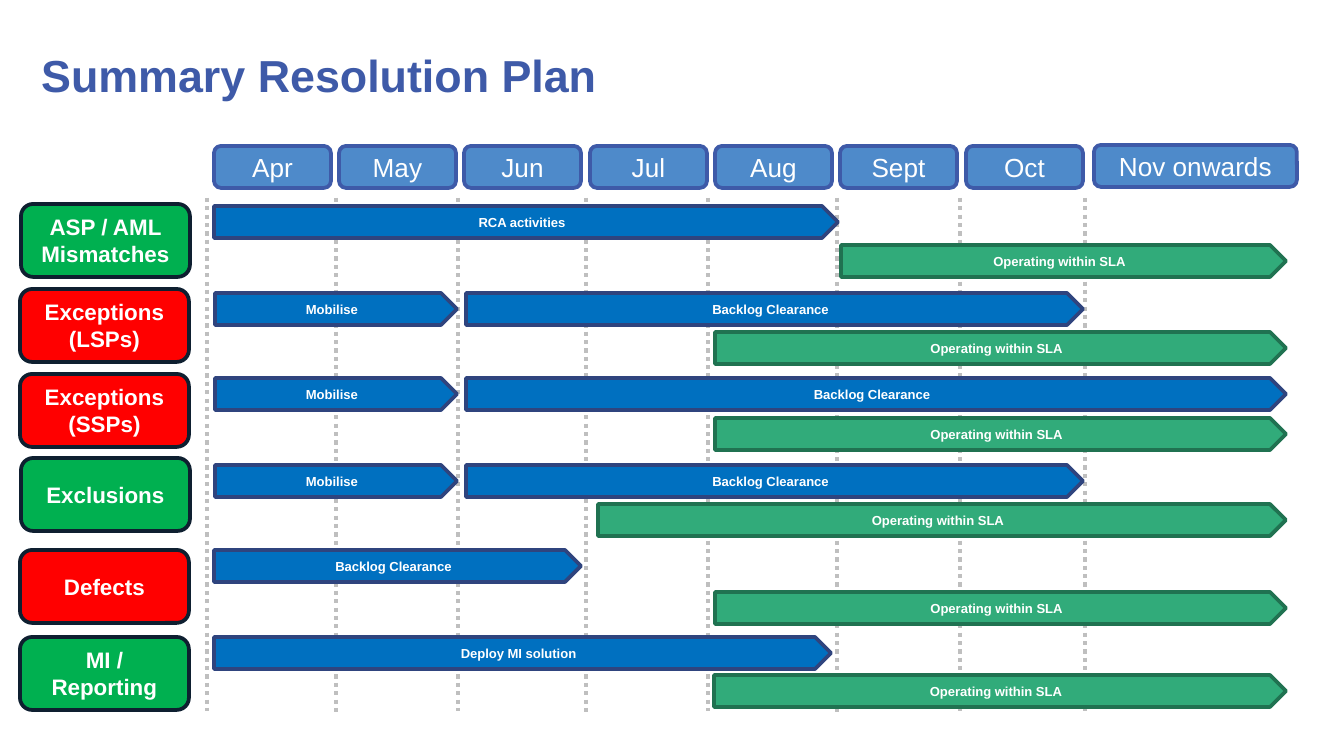
from dataclasses import dataclass

from lxml import etree
from pptx import Presentation
from pptx.dml.color import RGBColor
from pptx.enum.dml import MSO_LINE
from pptx.enum.shapes import MSO_CONNECTOR, MSO_SHAPE
from pptx.enum.text import MSO_ANCHOR, PP_ALIGN
from pptx.oxml.ns import qn
from pptx.util import Emu, Pt

ROUND = MSO_SHAPE.ROUNDED_RECTANGLE
ARROW = MSO_SHAPE.PENTAGON
LINE = MSO_CONNECTOR.STRAIGHT
DOTS = MSO_LINE.ROUND_DOT
MIDDLE = MSO_ANCHOR.MIDDLE
CENTER = PP_ALIGN.CENTER

FONT = "Arial"
SCALE = 914400 / 134.4  # EMU in one px

WHITE = RGBColor(0xFF, 0xFF, 0xFF)
INDIGO = RGBColor(0x3E, 0x5A, 0xA8)
SKY = RGBColor(0x4E, 0x8A, 0xCA)
GREY = RGBColor(0xBF, 0xBF, 0xBF)
BLUE = RGBColor(0x00, 0x70, 0xC0)
NAVY = RGBColor(0x2F, 0x44, 0x7E)
JADE = RGBColor(0x31, 0xAB, 0x7A)
PINE = RGBColor(0x20, 0x72, 0x51)
GREEN = RGBColor(0x00, 0xB0, 0x50)
RED = RGBColor(0xFF, 0x00, 0x00)
INK = RGBColor(0x0E, 0x1F, 0x30)


@dataclass
class Style:
    form: int
    fill: RGBColor
    edge: RGBColor
    size: int
    bold: bool


@dataclass
class Bar:
    text: str
    start: int
    end: int
    top: int
    style: Style


@dataclass
class Track:
    name: str
    left: int
    top: int
    style: Style
    bars: list[Bar]


MONTH = Style(ROUND, SKY, INDIGO, 14, False)
GOOD = Style(ROUND, GREEN, INK, 12, True)
LATE = Style(ROUND, RED, INK, 12, True)
WORK = Style(ARROW, BLUE, NAVY, 7, True)
STEADY = Style(ARROW, JADE, PINE, 7, True)

BAR_H = 32
MONTH_W, MONTH_H = 117, 42
LABEL_W, LABEL_H = 169, 73
END = 1286


def sla(start: int, top: int) -> Bar:
    return Bar("Operating within SLA", start, END, top, STEADY)


def clear(start: int, end: int, top: int) -> Bar:
    return Bar("Backlog Clearance", start, end, top, WORK)


def ready(top: int) -> Bar:
    return Bar("Mobilise", 215, 457, top, WORK)


MONTHS = ["Apr", "May", "Jun", "Jul", "Aug", "Sept", "Oct"]
GUIDES = [207, 336, 458, 586, 708, 837, 960, 1085]
TRACKS = [
    Track("ASP / AML Mismatches", 21, 204, GOOD,
          [Bar("RCA activities", 214, 838, 206, WORK), sla(841, 245)]),
    Track("Exceptions (LSPs)", 20, 289, LATE,
          [ready(293), clear(466, 1083, 293), sla(715, 332)]),
    Track("Exceptions (SSPs)", 20, 374, LATE,
          [ready(378), clear(466, END, 378), sla(715, 418)]),
    Track("Exclusions", 21, 458, GOOD,
          [ready(465), clear(466, 1083, 465), sla(598, 504)]),
    Track("Defects", 20, 550, LATE,
          [clear(214, 581, 550), sla(715, 592)]),
    Track("MI / Reporting", 20, 637, GOOD,
          [Bar("Deploy MI solution", 214, 831, 637, WORK), sla(714, 675)]),
]


def px(*marks: int) -> list[Emu]:
    return [Emu(round(mark * SCALE)) for mark in marks]


def write(shape, text: str, size: int, bold: bool, color: RGBColor) -> None:
    frame = shape.text_frame
    frame.word_wrap = True
    frame.vertical_anchor = MIDDLE
    para = frame.paragraphs[0]
    para.text = text
    font = para.font
    font.name, font.size, font.bold = FONT, Pt(size), bold
    font.color.rgb = color


def draw_box(slide, text: str, left: int, top: int,
             width: int, height: int, style: Style) -> None:
    box = slide.shapes.add_shape(style.form, *px(left, top, width, height))
    box.shadow.inherit = False
    box.fill.solid()
    box.fill.fore_color.rgb = style.fill
    box.line.color.rgb = style.edge
    box.line.width = Pt(2)
    write(box, text, style.size, style.bold, WHITE)
    box.text_frame.paragraphs[0].alignment = CENTER


def draw_guide(slide, x: int, top: int, end: int) -> None:
    guide = slide.shapes.add_connector(LINE, *px(x, top, x, end))
    guide.line.color.rgb = GREY
    guide.line.width = Pt(2.25)
    guide.line.dash_style = DOTS
    etree.SubElement(guide._element.spPr, qn("a:effectLst"))


def draw_track(slide, track: Track) -> None:
    draw_box(slide, track.name, track.left, track.top,
             LABEL_W, LABEL_H, track.style)
    for bar in track.bars:
        draw_box(slide, bar.text, bar.start, bar.top,
                 bar.end - bar.start, BAR_H, bar.style)


def main() -> None:
    deck = Presentation()
    deck.slide_width, deck.slide_height = px(1344, 756)
    slide = deck.slides.add_slide(deck.slide_layouts[6])

    # Title
    title = slide.shapes.add_textbox(*px(28, 28, 1250, 94))
    write(title, "Summary Resolution Plan", 24, True, INDIGO)

    # Month guides
    for i, x in enumerate(GUIDES):
        draw_guide(slide, x, 198, 714 if i in (1, 3, 5) else 711)

    # Month headings
    for i, month in enumerate(MONTHS):
        draw_box(slide, month, 214 + i * 752 // 6, 146,
                 MONTH_W, MONTH_H, MONTH)
    draw_box(slide, "Nov onwards", 1094, 145, 203, MONTH_H, MONTH)

    # Work tracks
    for track in TRACKS:
        draw_track(slide, track)

    deck.save("out.pptx")


if __name__ == "__main__":
    main()
